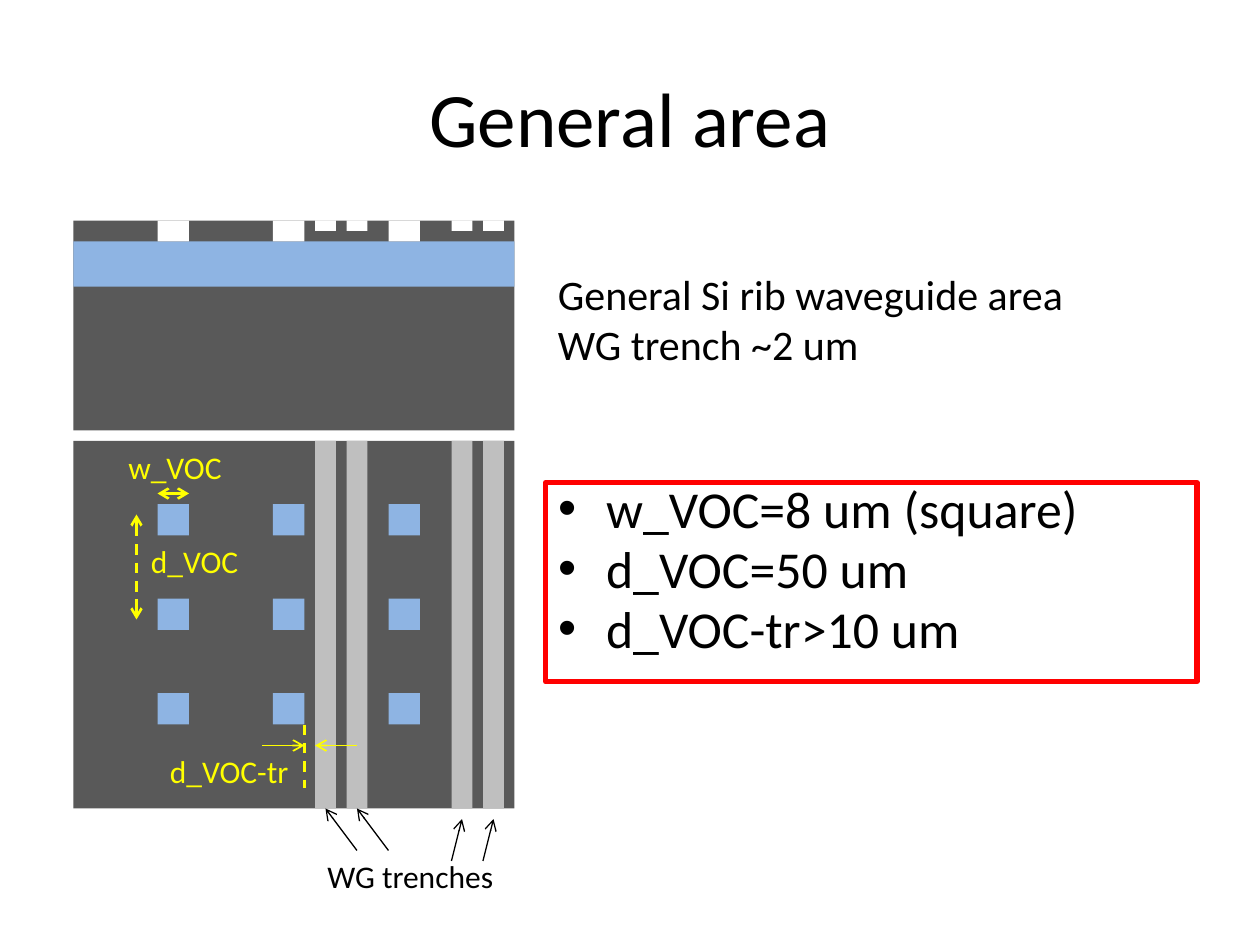
from pptx import Presentation
from pptx.dml.color import RGBColor
from pptx.enum.dml import MSO_LINE
from pptx.enum.shapes import MSO_CONNECTOR, MSO_SHAPE
from pptx.enum.text import MSO_AUTO_SIZE
from pptx.oxml.ns import qn
from pptx.util import Inches, Pt
from lxml import etree

RECTANGLE = MSO_SHAPE.RECTANGLE
STRAIGHT = MSO_CONNECTOR.STRAIGHT
DASH = MSO_LINE.DASH
FIT_SHAPE = MSO_AUTO_SIZE.SHAPE_TO_FIT_TEXT
NO_FIT = MSO_AUTO_SIZE.NONE

BLACK = RGBColor(0x00, 0x00, 0x00)
WHITE = RGBColor(0xFF, 0xFF, 0xFF)
RED = RGBColor(0xFF, 0x00, 0x00)
YELLOW = RGBColor(0xFF, 0xFF, 0x00)
SILICON = RGBColor(0x59, 0x59, 0x59)
OXIDE = RGBColor(0x8E, 0xB4, 0xE3)
TRENCH = RGBColor(0xBF, 0xBF, 0xBF)

# The drawing lies on a grid of twelve cells to the inch
CELL = Inches(1) / 12
WAFER_LEFT, WAFER_WIDTH = 7, 42
SECTION_TOP, SECTION_HEIGHT = 21, 20
PLAN_TOP, PLAN_HEIGHT = 42, 35
VOC_COLUMNS = (15, 26, 37)
VOC_ROWS = (48, 57, 66)
VOC_SIZE = 3
TRENCH_COLUMNS = (30, 33, 43, 46)
TRENCH_WIDTH = 2


def grid(*cells):
    return [round(cell * CELL) for cell in cells]


def format_runs(paragraph, **values):
    values = {"name": "Calibri", **values}
    for run in paragraph.runs:
        run.font.color.rgb = values.get("color", BLACK)
        for name in ("name", "size"):
            if name in values:
                setattr(run.font, name, values[name])


def add_block(slide, left, top, width, height, color):
    block = slide.shapes.add_shape(RECTANGLE, *grid(left, top, width, height))
    block.shadow.inherit = False
    block.fill.solid()
    block.fill.fore_color.rgb = color
    block.line.fill.background()


def add_label(slide, position, lines, size, color=BLACK, wrap=False):
    label = slide.shapes.add_textbox(*[Inches(length) for length in position])
    frame = label.text_frame
    frame.text = "\n".join(lines)
    for name, value in {"word_wrap": wrap, "auto_size": FIT_SHAPE}.items():
        setattr(frame, name, value)
    for paragraph in frame.paragraphs:
        format_runs(paragraph, size=Pt(size), color=color)


def add_line(slide, start, end, color, width, dashed=False, arrows=()):
    connector = slide.shapes.add_connector(STRAIGHT, *grid(*start, *end))
    connector.line.color.rgb = color
    connector.line.width = Pt(width)
    if dashed:
        connector.line.dash_style = DASH
    outline = connector.line._get_or_add_ln()
    for arrow in arrows:
        etree.SubElement(outline, qn(f"a:{arrow}"), type="arrow")
    etree.SubElement(connector._element.spPr, qn("a:effectLst"))


def fill_title(slide, text):
    title = slide.shapes.title
    title.text_frame.text = text
    format_runs(title.text_frame.paragraphs[0], size=Pt(44))


def fill_rules(slide, position, lines):
    body = slide.placeholders[1]
    for name, value in zip(("left", "top", "width", "height"), position):
        setattr(body, name, Inches(value))
    body.line.color.rgb = RED
    body.line.width = Pt(3)
    body.text_frame.text = "\n".join(lines)
    body.text_frame.auto_size = NO_FIT
    indent = Inches(0.38)
    for paragraph in body.text_frame.paragraphs:
        paragraph.line_spacing = 0.8
        format_runs(paragraph, size=Pt(29.6))
        properties = paragraph._p.get_or_add_pPr()
        properties.set("marL", str(indent))
        properties.set("indent", str(-indent))


def draw_plan(slide):
    add_block(slide, WAFER_LEFT, PLAN_TOP, WAFER_WIDTH, PLAN_HEIGHT, SILICON)
    for row in VOC_ROWS:
        for column in VOC_COLUMNS:
            add_block(slide, column, row, VOC_SIZE, VOC_SIZE, OXIDE)
    for column in TRENCH_COLUMNS:
        add_block(slide, column, PLAN_TOP, TRENCH_WIDTH, PLAN_HEIGHT, TRENCH)


def draw_section(slide):
    add_block(slide, WAFER_LEFT, SECTION_TOP, WAFER_WIDTH, SECTION_HEIGHT, SILICON)
    add_block(slide, WAFER_LEFT, SECTION_TOP + 2, WAFER_WIDTH, 4.3, OXIDE)
    # Openings reach the oxide, trenches go half as deep
    for column in VOC_COLUMNS:
        add_block(slide, column, SECTION_TOP, VOC_SIZE, 2, WHITE)
    for column in TRENCH_COLUMNS:
        add_block(slide, column, SECTION_TOP, TRENCH_WIDTH, 1, WHITE)


def draw_dimensions(slide):
    both, tip = ("headEnd", "tailEnd"), ("tailEnd",)
    # Width and pitch of the openings
    add_line(slide, (15, 47), (18, 47), YELLOW, 1.5, True, both)
    add_line(slide, (13, 49), (13, 59), YELLOW, 1.5, True, both)
    add_label(slide, (0.92, 3.51, 0.95, 0.4), ["w_VOC"], 18, YELLOW)
    add_label(slide, (1.1, 4.25, 0.9, 0.4), ["d_VOC"], 18, YELLOW)
    # Gap between opening and trench
    add_label(slide, (1.25, 5.92, 1.15, 0.4), ["d_VOC-tr"], 18, YELLOW)
    add_line(slide, (29, 69), (29, 75), YELLOW, 1.5, True)
    for start, end in ((25, 29), (34, 30)):
        add_line(slide, (start, 71), (end, 71), YELLOW, 1, arrows=tip)
    # Pointers to the trenches
    add_label(slide, (2.5, 6.75, 1.53, 0.4), ["WG trenches"], 18)
    for column, shift, bottom, top in zip(
            TRENCH_COLUMNS, (4, 4, 0, 0), (81, 81, 82, 82), (77, 77, 78, 78)):
        add_line(slide, (column + shift, bottom), (column + 1, top),
                 BLACK, 0.75, arrows=tip)


def main():
    presentation = Presentation()
    presentation.slide_width = Inches(10)
    presentation.slide_height = Inches(7.5)
    slide = presentation.slides.add_slide(presentation.slide_layouts[1])

    fill_title(slide, "General area")
    fill_rules(slide, (4.33, 3.83, 5.17, 1.58),
               ["w_VOC=8 um (square)", "d_VOC=50 um", "d_VOC-tr>10 um"])
    draw_plan(slide)
    draw_dimensions(slide)
    add_label(slide, (4.33, 2.08, 5.17, 0.91),
              ["General Si rib waveguide area", "WG trench ~2 um"], 24, wrap=True)
    draw_section(slide)

    presentation.save("out.pptx")


if __name__ == "__main__":
    main()
